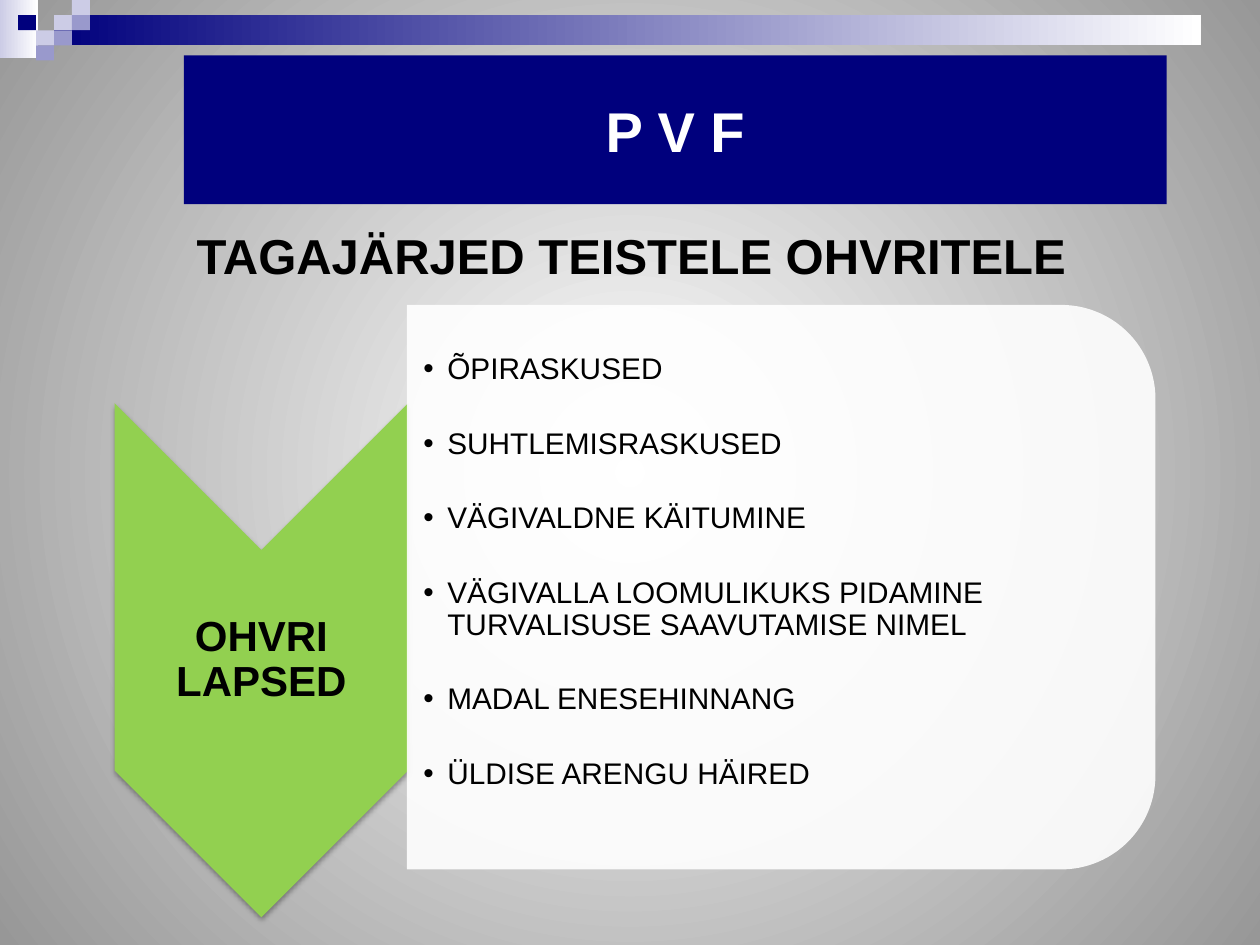
from dataclasses import dataclass

from lxml import etree
from pptx import Presentation
from pptx.dml.color import RGBColor
from pptx.enum.shapes import MSO_SHAPE
from pptx.enum.text import MSO_ANCHOR, PP_ALIGN
from pptx.oxml.ns import qn
from pptx.util import Inches, Pt

RECT = MSO_SHAPE.RECTANGLE
CHEVRON = MSO_SHAPE.CHEVRON
ROUND_TOP = MSO_SHAPE.ROUND_2_SAME_RECTANGLE
TOP, MIDDLE = MSO_ANCHOR.TOP, MSO_ANCHOR.MIDDLE
LEFT, CENTER = PP_ALIGN.LEFT, PP_ALIGN.CENTER


@dataclass(frozen=True)
class Theme:
    font: str = "Arial"
    navy: str = "00007D"
    violet: str = "9999CC"
    lilac: str = "CCCCE6"
    white: str = "FFFFFF"
    grey: str = "979797"
    green: str = "92D050"
    black: str = "000000"
    title: int = 32
    heading: int = 28
    label: int = 24
    body: int = 17


THEME = Theme()

EFFECTS = ["ÕPIRASKUSED", "SUHTLEMISRASKUSED", "VÄGIVALDNE KÄITUMINE",
           "VÄGIVALLA LOOMULIKUKS PIDAMINE TURVALISUSE SAAVUTAMISE NIMEL",
           "MADAL ENESEHINNANG", "ÜLDISE ARENGU HÄIRED"]

# Column, row and colour of each square in the corner mosaic
MOSAIC = [(3, 1, THEME.lilac), (4, 0, THEME.lilac), (4, 1, THEME.violet),
          (2, 2, THEME.lilac), (1, 1, THEME.navy), (3, 2, THEME.violet),
          (2, 3, THEME.violet)]


def add_xml(parent, tag, **attrs):
    return etree.SubElement(parent, qn(tag), attrs)


def set_gradient(fill, start, end):
    fill.gradient()
    for stop, color in zip(fill.gradient_stops, (start, end)):
        stop.color.rgb = RGBColor.from_string(color)


def add_block(s, box, kind, color, end_color=None, rotation=0):
    sp = s.shapes.add_shape(kind, *map(Inches, box))
    sp.shadow.inherit = False
    sp.line.fill.background()
    sp.rotation = rotation
    if end_color:
        set_gradient(sp.fill, color, end_color)
        sp.fill.gradient_angle = 0
    else:
        sp.fill.solid()
        sp.fill.fore_color.rgb = RGBColor.from_string(color)
    return sp


def upright_box(box):
    """Frame that fills the given box once it is turned by 90 degrees."""
    x, y, w, h = box
    return x + (w - h) / 2, y + (h - w) / 2, h, w


def write_text(sp, lines, size, color=THEME.black, bold=True, align=CENTER,
               anchor=MIDDLE, insets=(0.1, 0.05, 0.1, 0.05), spacing=1.0,
               after=0, bullet_indent=None):
    tf = sp.text_frame
    sides = ("margin_left", "margin_top", "margin_right", "margin_bottom")
    frame = dict(zip(sides, map(Inches, insets)))
    frame.update(word_wrap=True, vertical_anchor=anchor)
    for name, value in frame.items():
        setattr(tf, name, value)
    for i, line in enumerate(lines):
        p = tf.paragraphs[0] if i == 0 else tf.add_paragraph()
        p.text = line
        para = {"alignment": align, "line_spacing": spacing,
                "space_after": Pt(after)}
        for name, value in para.items():
            setattr(p, name, value)
        if bullet_indent:
            pPr = p._p.get_or_add_pPr()
            pPr.set("marL", str(Inches(bullet_indent)))
            pPr.set("indent", str(-Inches(bullet_indent)))
            add_xml(pPr, "a:buFont", typeface=THEME.font)
            add_xml(pPr, "a:buChar", char="•")
        font = {"name": THEME.font, "size": Pt(size), "bold": bold}
        for name, value in font.items():
            setattr(p.runs[0].font, name, value)
        p.runs[0].font.color.rgb = RGBColor.from_string(color)


def add_background(s):
    set_gradient(s.background.fill, THEME.white, THEME.grey)
    grad = s.element.find(".//" + qn("a:gradFill"))
    grad.remove(grad.find(qn("a:lin")))
    radial = add_xml(grad, "a:path", path="circle")
    add_xml(radial, "a:fillToRect", l="50000", t="50000", r="50000", b="50000")


def add_banner(s, box):
    """Gradient bar with a mosaic of squares in the corner."""
    x, y, w, h = box
    cell_w, cell_h = 1 / 7, h / 4
    add_block(s, (x, y, 0.3, 0.46), RECT, THEME.lilac, THEME.white)
    add_block(s, (x + 3 * cell_w, y + cell_h, w - 3 * cell_w, 2 * cell_h),
              RECT, THEME.navy, THEME.white)
    for col, row, color in MOSAIC:
        add_block(s, (x + col * cell_w, y + row * cell_h, cell_w, cell_h),
                  RECT, color)


def add_title(s, box):
    sp = add_block(s, box, RECT, THEME.navy)
    write_text(sp, ["P V F"], THEME.title, THEME.white)


def add_heading(s, box):
    sp = s.shapes.add_textbox(*map(Inches, box))
    write_text(sp, ["TAGAJÄRJED TEISTELE OHVRITELE"], THEME.heading, anchor=TOP)


def add_arrow(s, box):
    """Downward chevron with its label."""
    x, y, w, h = box
    sp = add_block(s, upright_box(box), CHEVRON, THEME.green, rotation=90)
    effects = sp._element.spPr.find(qn("a:effectLst"))
    shadow = add_xml(effects, "a:outerShdw", blurRad=str(Pt(3.1)),
                     dist=str(Pt(1.8)), dir="5400000", rotWithShape="0")
    color = add_xml(shadow, "a:srgbClr", val=THEME.black)
    add_xml(color, "a:alpha", val="35000")

    label = s.shapes.add_textbox(Inches(x), Inches(y + w / 2),
                                 Inches(w), Inches(h - w))
    write_text(label, ["OHVRI LAPSED"], THEME.label, insets=(0.02,) * 4,
               spacing=0.9)


def add_effects(s, box):
    """Translucent panel rounded on the right, with the bulleted list."""
    x, y, w, h = box
    sp = add_block(s, upright_box(box), ROUND_TOP, THEME.white, rotation=90)
    color = sp._element.spPr.find(qn("a:solidFill"))[0]
    add_xml(color, "a:alpha", val="90000")

    text = s.shapes.add_textbox(Inches(x), Inches(y + 0.22),
                                Inches(w - 0.22), Inches(h - 0.44))
    write_text(text, EFFECTS, THEME.body, bold=False, align=LEFT, anchor=TOP,
               insets=(0.13, 0.17, 0.01, 0.01), spacing=0.9, after=24.2,
               bullet_indent=0.19)


def main():
    prs = Presentation()
    prs.slide_width, prs.slide_height = Inches(10), Inches(7.5)
    s = prs.slides.add_slide(prs.slide_layouts[6])
    add_background(s)
    add_banner(s, (0, 0, 9.53, 0.48))
    add_title(s, (1.46, 0.44, 7.8, 1.18))
    add_heading(s, (0.51, 1.74, 9, 0.64))
    add_arrow(s, (0.91, 3.2, 2.33, 4.08))
    add_effects(s, (3.23, 2.42, 5.94, 4.48))
    prs.save("out.pptx")


if __name__ == "__main__":
    main()
